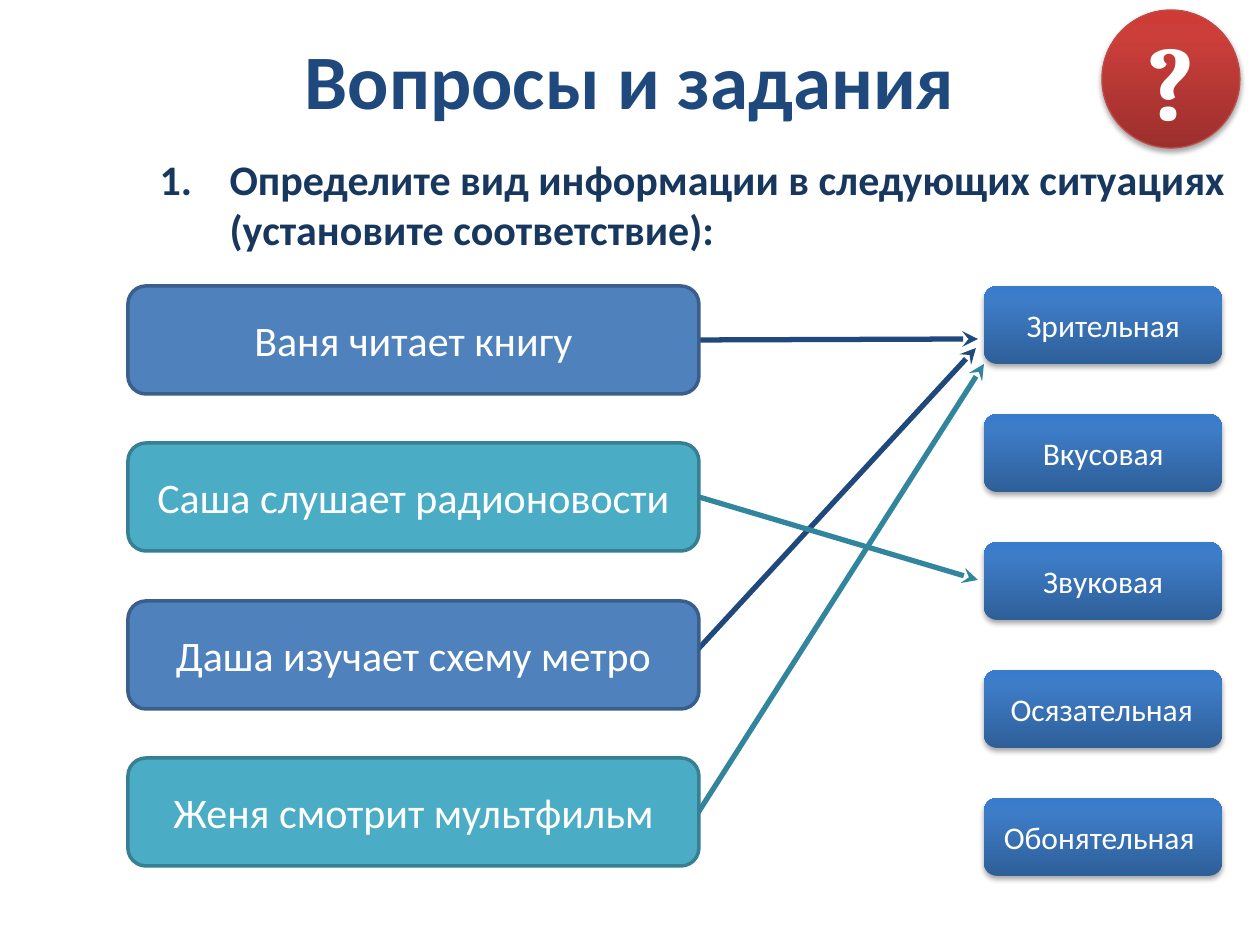
from copy import deepcopy

from pptx import Presentation
from pptx.dml.color import RGBColor
from pptx.enum.shapes import MSO_CONNECTOR as Connector, MSO_SHAPE as Shape
from pptx.enum.text import MSO_ANCHOR as Anchor, PP_ALIGN as Align
from pptx.oxml import parse_xml
from pptx.oxml.ns import nsdecls, qn
from pptx.util import Pt

PX = 914400 // 126

WHITE = RGBColor(0xFF, 0xFF, 0xFF)
NAVY = RGBColor(0x1F, 0x49, 0x7D)
DARK_NAVY = RGBColor(0x17, 0x37, 0x5E)
TEAL = RGBColor(0x31, 0x85, 0x9C)
BLUE_FILL = RGBColor(0x4F, 0x81, 0xBD)
BLUE_EDGE = RGBColor(0x3A, 0x5F, 0x8C)
TEAL_FILL = RGBColor(0x4B, 0xAC, 0xC6)
TEAL_EDGE = RGBColor(0x37, 0x7F, 0x92)
RED_EDGE = RGBColor(0xBF, 0x4C, 0x48)
BLUE_STOPS = [(0, RGBColor(0x2F, 0x5F, 0x99)), (0.8, RGBColor(0x3D, 0x7C, 0xC7)),
              (1, RGBColor(0x3A, 0x7C, 0xCB))]
RED_STOPS = [(0, RGBColor(0x9C, 0x2F, 0x2D)), (0.8, RGBColor(0xCB, 0x3E, 0x3A)),
             (1, RGBColor(0xCE, 0x3B, 0x37))]

# Content
TITLE = "Вопросы и задания"
TASK = "Определите вид информации в следующих ситуациях (установите соответствие):"
SITUATIONS = ["Ваня читает книгу", "Саша слушает радионовости",
              "Даша изучает схему метро", "Женя смотрит мультфильм"]
# Kind of information and left inset
KINDS = [("Зрительная", 13), ("Вкусовая", 13), ("Звуковая", 13),
         ("Осязательная", 10), ("Обонятельная", 5)]
# Situation index, start (None: middle of the right side), end
ANSWERS = [(0, None, (978, 339)), (1, None, (978, 580)),
           (2, (689, 659), (976, 348)), (3, (689, 827), (984, 364))]

# Layout
TOP = 286
SITUATION_X, SITUATION_W, SITUATION_H = 128, 571, 108
KIND_X, KIND_W, KIND_H, KIND_STEP = 984, 238, 78, 128


def place(shape, *bounds):
    shape.left, shape.top, shape.width, shape.height = (v * PX for v in bounds)


def write(shape, text, size, color=WHITE, font="Calibri", bold=False,
          align=Align.CENTER, anchor=Anchor.MIDDLE):
    frame = shape.text_frame
    frame.word_wrap = True
    frame.vertical_anchor = anchor
    para = frame.paragraphs[0]
    para.alignment = align
    para.space_before = Pt(0)
    span = para.add_run()
    span.text = text
    span.font.name, span.font.size, span.font.bold = font, Pt(size), bold
    span.font.color.rgb = color
    return para


def add_box(page, kind, bounds, edge=None, width=2):
    box = page.shapes.add_shape(kind, *(v * PX for v in bounds))
    box.shadow.inherit = False
    if edge is None:
        box.line.fill.background()
    else:
        box.line.color.rgb = edge
        box.line.width = Pt(width)
    return box


def make_glossy(box, stops):
    """Vertical three-stop gradient and a soft shadow below."""
    box.fill.gradient()
    box.fill.gradient_angle = 90
    properties = box._element.spPr
    stop_list = properties.find(qn("a:gradFill")).find(qn("a:gsLst"))
    stop_list.append(deepcopy(stop_list[-1]))
    for stop, (position, color) in zip(box.fill.gradient_stops, stops):
        stop.position = position
        stop.color.rgb = color
    properties.find(qn("a:effectLst")).append(parse_xml(
        f'<a:outerShdw {nsdecls("a")} blurRad="40000" dist="23000" dir="5400000" '
        'rotWithShape="0"><a:srgbClr val="000000"><a:alpha val="35000"/>'
        '</a:srgbClr></a:outerShdw>'))


def add_arrow(page, source, start, end, color):
    x, y = start or (0, 0)
    arrow = page.shapes.add_connector(
        Connector.STRAIGHT, x * PX, y * PX, end[0] * PX, end[1] * PX)
    if start is None:
        arrow.begin_connect(source, 3)
    arrow.line.color.rgb = color
    arrow.line.width = Pt(3)
    arrow.line._get_or_add_ln().append(
        parse_xml(f'<a:tailEnd {nsdecls("a")} type="stealth"/>'))
    arrow._element.spPr.append(parse_xml(f'<a:effectLst {nsdecls("a")}/>'))
    # Arrows lie behind everything else
    page.shapes._spTree.insert(2, arrow._element)


def main():
    deck = Presentation()
    deck.slide_width, deck.slide_height = 1260 * PX, 945 * PX
    page = deck.slides.add_slide(deck.slide_layouts[1])

    # Title and numbered task
    title, body = page.placeholders
    place(title, 63, 0, 1134, 158)
    write(title, TITLE, 44, NAVY, bold=True)
    place(body, 147, 147, 1113, 137)
    para = write(body, TASK, 24, DARK_NAVY, bold=True, align=Align.LEFT, anchor=Anchor.TOP)
    indent = para._p.get_or_add_pPr()
    indent.set("marL", str(70 * PX))
    indent.set("indent", str(-70 * PX))
    indent.append(parse_xml(f'<a:buFont {nsdecls("a")} typeface="+mj-lt"/>'))
    indent.append(parse_xml(f'<a:buAutoNum {nsdecls("a")} type="arabicPeriod"/>'))

    # Kinds of information
    for row, (name, inset) in enumerate(KINDS):
        box = add_box(page, Shape.ROUNDED_RECTANGLE,
                      (KIND_X, TOP + row * KIND_STEP, KIND_W, KIND_H))
        make_glossy(box, BLUE_STOPS)
        write(box, name, 18)
        box.text_frame.margin_left = inset * PX

    # Question badge
    badge = add_box(page, Shape.OVAL, (1102, 10, 138, 138), RED_EDGE, 0.75)
    make_glossy(badge, RED_STOPS)
    write(badge, "?", 60, font="Cambria", bold=True)

    # Situations, in alternating colours
    boxes = []
    for row, text in enumerate(SITUATIONS):
        fill, edge = [(BLUE_FILL, BLUE_EDGE), (TEAL_FILL, TEAL_EDGE)][row % 2]
        box = add_box(page, Shape.ROUNDED_RECTANGLE,
                      (SITUATION_X, TOP + row * 315 // 2, SITUATION_W, SITUATION_H), edge)
        box.fill.solid()
        box.fill.fore_color.rgb = fill
        write(box, text, 24)
        boxes.append(box)

    # Answer arrows
    for row, start, end in ANSWERS:
        add_arrow(page, boxes[row], start, end, [NAVY, TEAL][row % 2])

    deck.save("out.pptx")


if __name__ == "__main__":
    main()
